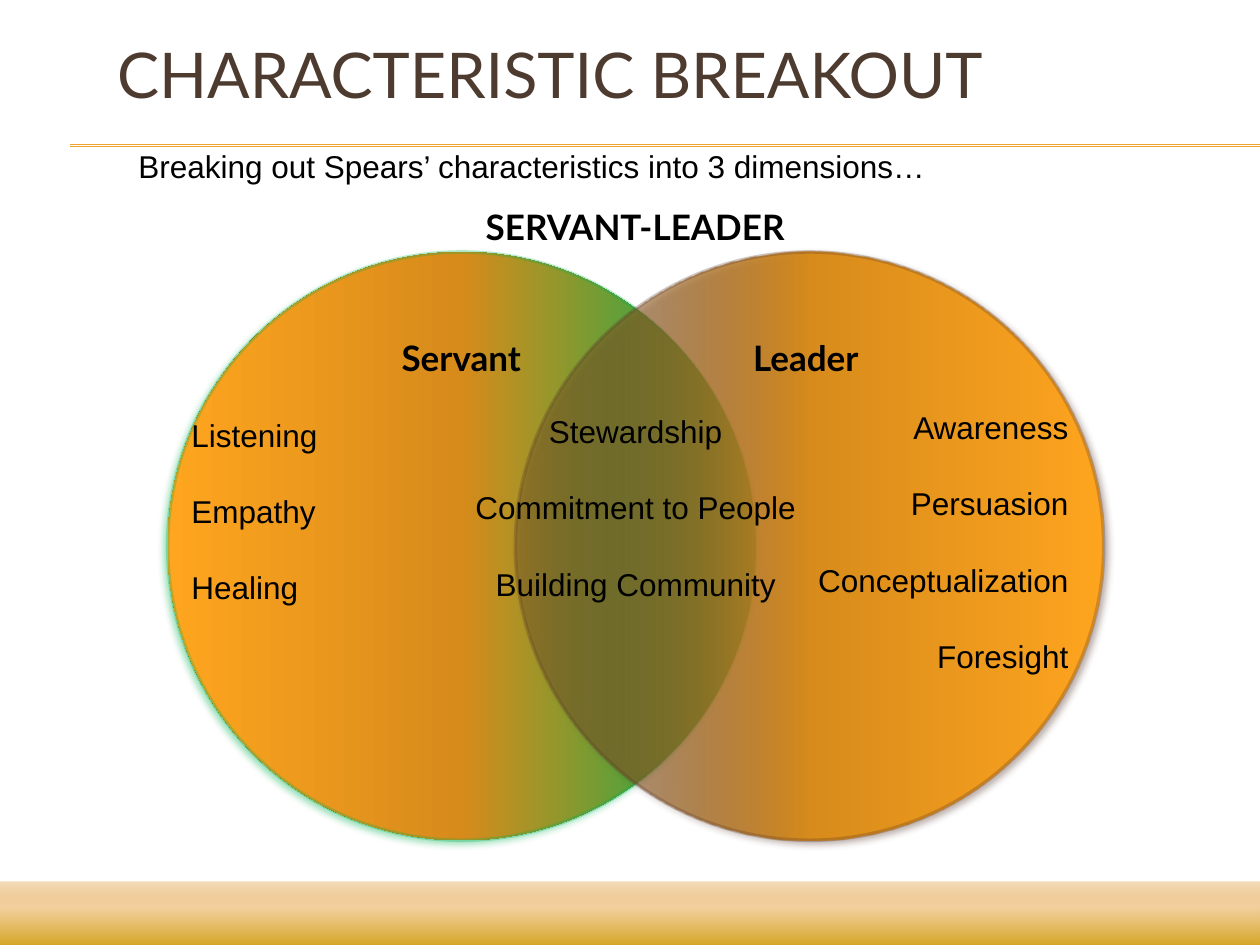
import pptx
import pptx.dml.color
import pptx.enum.shapes
import pptx.enum.text
import pptx.oxml
import pptx.oxml.ns
import pptx.util
from lxml import etree

Cm, Pt = pptx.util.Cm, pptx.util.Pt
RGBColor = pptx.dml.color.RGBColor
SHAPE = pptx.enum.shapes.MSO_SHAPE
ALIGN = pptx.enum.text.PP_ALIGN
ANCHOR = pptx.enum.text.MSO_ANCHOR
qn = pptx.oxml.ns.qn

BLACK = RGBColor(0x00, 0x00, 0x00)
BROWN = RGBColor(0x4E, 0x3B, 0x30)
AMBER = RGBColor(0xF0, 0xA2, 0x2E)
GREEN = RGBColor(0x00, 0xB0, 0x50)
UMBER = RGBColor(0x52, 0x32, 0x27)
OCHRE = RGBColor(0xD7, 0x8B, 0x1B)
ORANGE = RGBColor(0xFF, 0xA5, 0x1F)
GOLD = RGBColor(0xCC, 0x99, 0x00)
SAND = RGBColor(0xEF, 0xC1, 0x7E)
RUST = RGBColor(0xD6, 0x80, 0x00)


class Deck:
    heading_font = "Lato"
    body_font = "Arial"
    body_size = 18
    list_gap = 22

    def __init__(self, width, height):
        self.prs = pptx.Presentation()
        self.prs.slide_width, self.prs.slide_height = Cm(width), Cm(height)
        self.s = self.prs.slides.add_slide(self.prs.slide_layouts[6])

    def add_color(self, parent, color, opacity):
        clr = etree.SubElement(parent, qn("a:srgbClr"), val=str(color))
        if opacity < 100:
            etree.SubElement(clr, qn("a:alpha"), val=str(opacity * 1000))

    def line(self, x1, y1, x2, y2, color, width):
        cx = self.s.shapes.add_connector(
            pptx.enum.shapes.MSO_CONNECTOR.STRAIGHT, Cm(x1), Cm(y1), Cm(x2), Cm(y2))
        cx.line.color.rgb, cx.line.width = color, Pt(width)
        etree.SubElement(cx._element.spPr, qn("a:effectLst"))

    def gradient_shape(self, kind, x, y, w, h, stops, angle):
        """Stops are (position %, colour, opacity %); the angle runs clockwise."""
        sp = self.s.shapes.add_shape(kind, Cm(x), Cm(y), Cm(w), Cm(h))
        sp.shadow.inherit = False
        sp.line.fill.background()
        grad = etree.Element(qn("a:gradFill"), rotWithShape="1")
        stop_list = etree.SubElement(grad, qn("a:gsLst"))
        for pos, color, opacity in stops:
            gs = etree.SubElement(stop_list, qn("a:gs"), pos=str(pos * 1000))
            self.add_color(gs, color, opacity)
        etree.SubElement(grad, qn("a:lin"), ang=str(angle * 60000), scaled="0")
        sp._element.spPr.find(qn("a:prstGeom")).addnext(grad)
        return sp

    def circle(self, x, y, size, color, opacity, angle, shadow_angle):
        stops = [(0, color, opacity), (50, OCHRE, 100), (100, ORANGE, 100)]
        sp = self.gradient_shape(SHAPE.OVAL, x, y, size, size, stops, angle)
        sp.line.color.rgb, sp.line.width = color, Pt(2)
        clr = sp.line._ln.find(".//" + qn("a:srgbClr"))
        etree.SubElement(clr, qn("a:alpha"), val="25000")
        shadow = etree.SubElement(
            sp._element.spPr.find(qn("a:effectLst")), qn("a:outerShdw"),
            blurRad=str(Pt(4)), dist=str(Pt(3)), dir=str(shadow_angle * 60000),
            algn="ctr", rotWithShape="0")
        self.add_color(shadow, color, 40)

    def text(self, x, y, w, h, lines, font=body_font, size=body_size, color=BLACK,
             bold=False, align=ALIGN.LEFT, anchor=ANCHOR.TOP, insets=None, spacing=None):
        tf = self.s.shapes.add_textbox(Cm(x), Cm(y), Cm(w), Cm(h)).text_frame
        tf.word_wrap, tf.vertical_anchor = True, anchor
        if insets:
            tf.margin_left, tf.margin_top, tf.margin_right, tf.margin_bottom = map(Cm, insets)
        for i, line in enumerate(lines):
            p = tf.add_paragraph() if i else tf.paragraphs[0]
            p.text, p.alignment = line, align
            if i:
                p.space_before = Pt(self.list_gap)
            if spacing:
                p.line_spacing = spacing
            p.font.name, p.font.size = font, Pt(size)
            p.font.bold, p.font.color.rgb = bold, color

    def heading(self, x, y, w, h, label, **style):
        self.text(x, y, w, h, [label], font=self.heading_font, **style)


def main():
    deck = Deck(25.4, 19.05)

    # Rule under the title and band at the foot
    for y in (2.92, 2.95):
        deck.line(1.42, y, 25.4, y, AMBER, 0.75)
    deck.gradient_shape(SHAPE.RECTANGLE, -0.03, 17.78, 25.48, 1.47,
                        [(0, GOLD, 100), (65, SAND, 75), (100, RUST, 25)], 270)

    # Title
    deck.heading(2.11, 0.2, 21.59, 2.54, "CHARACTERISTIC BREAKOUT",
                 size=36, color=BROWN, anchor=ANCHOR.MIDDLE)

    # Overlapping circles with their headings
    top, size, inset, label_size = 5.08, 11.86, 1.73, 8.38
    circles = [
        ("Servant", 3.38, GREEN, 100, 180, 135, (0, 0.08, 0, 0.08)),
        ("Leader", 10.39, UMBER, 25, 0, 45, (1.9, 0.08, 2.03, 0.08)),
    ]
    for label, x, color, opacity, angle, shadow_angle, insets in circles:
        deck.circle(x, top, size, color, opacity, angle, shadow_angle)
        deck.heading(x + inset, top + inset, label_size, label_size, label, size=20,
                     bold=True, align=ALIGN.CENTER, insets=insets, spacing=0.9)

    # Characteristics in each dimension
    deck.text(15.44, 8.1, 6.35, 5.64,
              ["Awareness", "Persuasion", "Conceptualization", "Foresight"],
              align=ALIGN.RIGHT)
    deck.text(3.61, 8.26, 6.35, 4.11, ["Listening", "Empathy", "Healing"])
    deck.text(9.32, 8.18, 6.99, 4.11,
              ["Stewardship", "Commitment to People", "Building Community"],
              align=ALIGN.CENTER)

    # Introduction and diagram heading
    deck.text(2.54, 2.84, 22.66, 1.02,
              ["Breaking out Spears’ characteristics into 3 dimensions…"])
    deck.heading(2.11, 4.01, 21.39, 1.12, "SERVANT-LEADER",
                 size=20, bold=True, align=ALIGN.CENTER)

    deck.prs.save("out.pptx")


if __name__ == "__main__":
    main()
